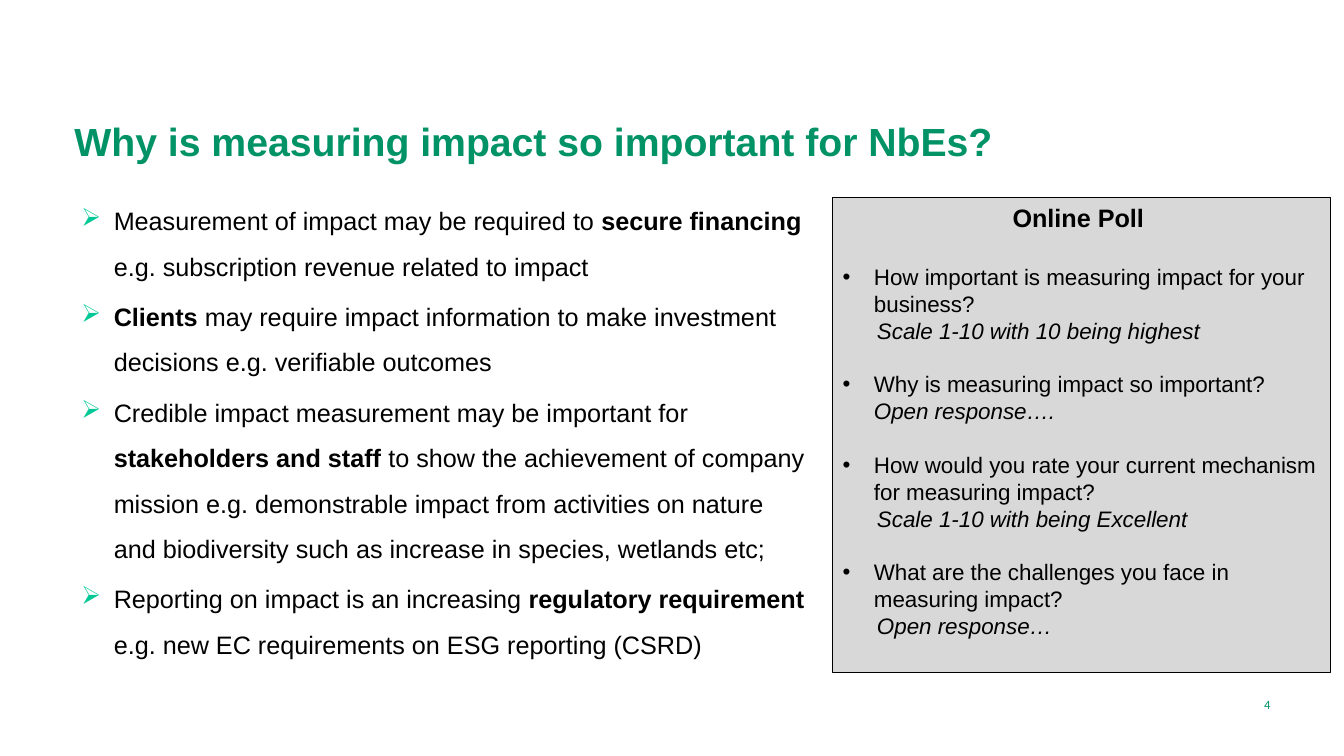
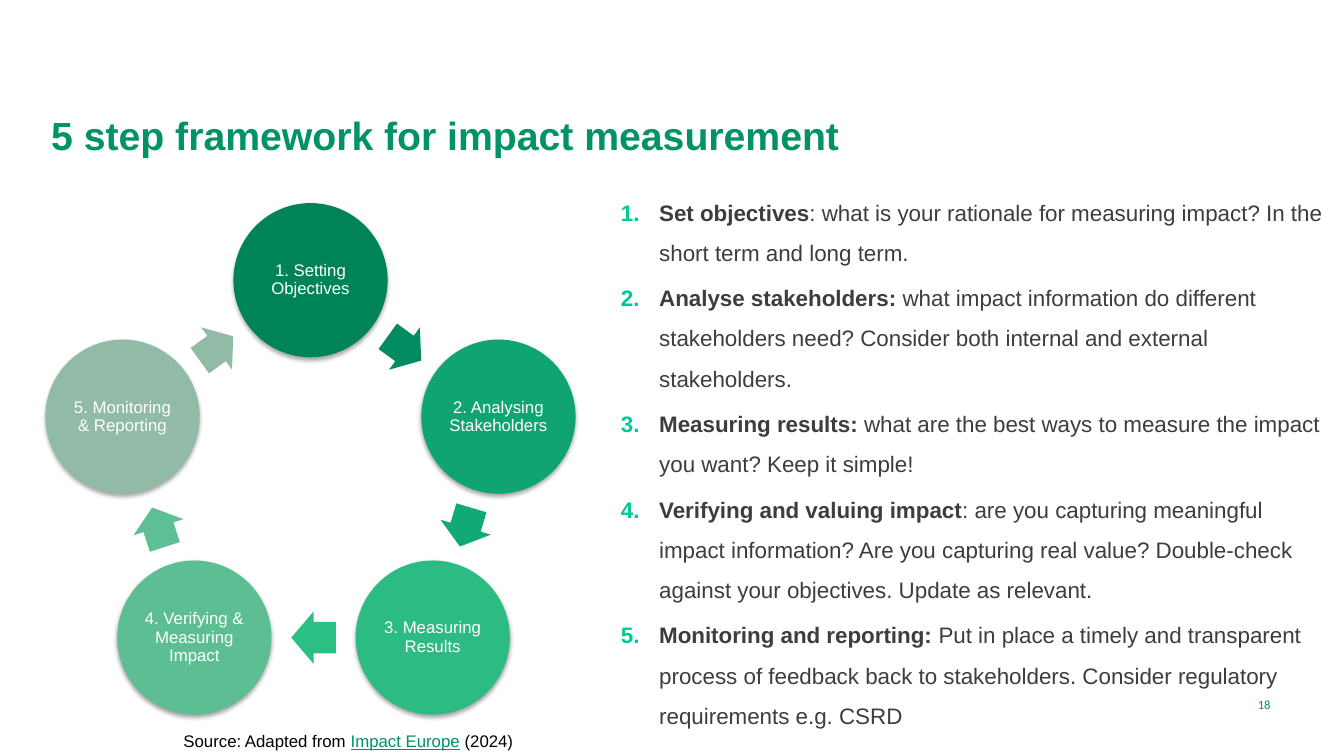
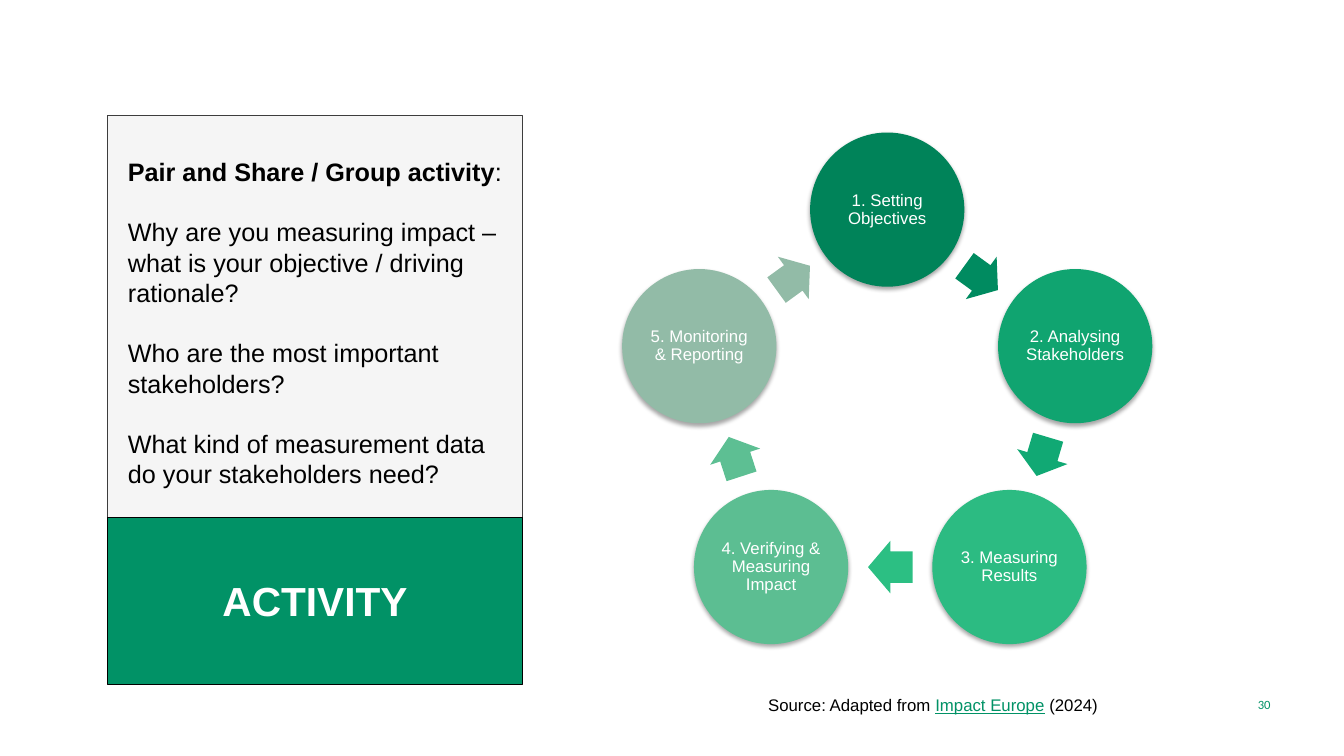
import dataclasses
import math

import lxml.etree
import pptx
import pptx.dml.color
import pptx.enum.shapes
import pptx.enum.text
import pptx.oxml.ns
import pptx.util

ALIGN = pptx.enum.text.PP_ALIGN
ANCHOR = pptx.enum.text.MSO_ANCHOR
SHAPE = pptx.enum.shapes.MSO_SHAPE
inches = pptx.util.Inches
qn = pptx.oxml.ns.qn


@dataclasses.dataclass(frozen=True)
class Theme:
    width: float = 13.33
    height: float = 7.5
    font: str = "Arial"
    number_font: str = "Calibri"
    green: str = "019266"
    bullet: str = "00C897"
    black: str = "000000"
    white: str = "FFFFFF"
    gray: str = "3D3D3D"
    poll_fill: str = "D8D8D8"
    panel_fill: str = "F5F5F5"
    title: float = 28
    banner: float = 29
    body: float = 18
    steps: float = 16
    small: float = 12
    number: float = 9
    line: float = 0.75


THEME = Theme()
LINE_HEIGHT = 1.2
ARROW_BULLET = ("Wingdings", "Ø")
DOT_BULLET = ("Arial", "•")
NUMBER_BULLET = ("Arial", None)

REASONS = [
    [("Measurement of impact may be required to ", ""), ("secure financing ", "b"),
     ("e.g. subscription revenue related to impact", "")],
    [("Clients", "b"),
     (" may require impact information to make investment decisions e.g. verifiable outcomes", "")],
    [("Credible impact measurement may be important for ", ""), ("stakeholders and staff ", "b"),
     ("to show the achievement of company mission e.g. demonstrable impact from activities on nature "
      "and biodiversity such as increase in species, wetlands etc;", "")],
    [("Reporting on impact is an increasing ", ""), ("regulatory requirement ", "b"),
     ("e.g. new EC requirements on ESG reporting (CSRD)", "")],
]

POLL_TITLE = "Online Poll "
POLL = [
    ("How important is measuring impact for your business?", "Scale 1-10 with 10 being highest", 0.34),
    ("Why is measuring impact so important?", "Open response….", 0.31),
    ("How would you rate your current mechanism for measuring impact?",
     "Scale 1-10 with being Excellent", 0.34),
    ("What are the challenges you face in measuring impact?", "Open response…", 0.34),
]

STEPS = [
    ("Set objectives", ": what is your rationale for measuring impact? In the short term and long term."),
    ("Analyse stakeholders: ", "what impact information do different stakeholders need? "
     "Consider both internal and external stakeholders."),
    ("Measuring results: ", "what are the best ways to measure the impact you want? Keep it simple!"),
    ("Verifying and valuing impact", ": are you capturing meaningful impact information? "
     "Are you capturing real value? Double-check against your objectives. Update as relevant."),
    ("Monitoring and reporting: ", "Put in place a timely and transparent process of feedback back "
     "to stakeholders. Consider regulatory requirements e.g. CSRD"),
]

CYCLE = [
    ("1. Setting Objectives", "008359", "008B60", 0),
    ("2. Analysing Stakeholders", "10A470", "11A974", 0),
    ("3. Measuring Results", "2CBB82", "2CBF83", 0.06),
    ("4. Verifying & Measuring Impact", "5CBE92", "5DBF93", 0),
    ("5. Monitoring & Reporting", "92BBA7", "92BBA7", 0),
]
CYCLE_RADIUS = 1.96
CIRCLE = 1.53
ARROW_SHARE = 0.53
ARROW_HEIGHT = 0.52

SOURCE = [("Source: Adapted from ", ""), ("Impact Europe", "u"), (" (2024)", "")]

ACTIVITY = [
    [("Pair and Share / Group activity", "b"), (":", "")],
    [("Why are you measuring impact – what is your objective / driving rationale?", "")],
    [("Who are the most important stakeholders?", "")],
    [("What kind of measurement data do your stakeholders need?", "")],
]


def rgb(color):
    return pptx.dml.color.RGBColor.from_string(color)


def set_frame(shape, anchor=ANCHOR.TOP, margins=(0.1, 0.05, 0.1, 0.05)):
    frame = shape.text_frame
    frame.word_wrap = True
    frame.vertical_anchor = anchor
    frame.margin_left, frame.margin_top, frame.margin_right, frame.margin_bottom = map(inches, margins)
    return frame


def add_box(page, at, **frame_options):
    return set_frame(page.shapes.add_textbox(*map(inches, at)), **frame_options)


def add_shape(shapes, kind, at, fill, line=None):
    shape = shapes.add_shape(kind, *map(inches, at))
    shape.shadow.inherit = False
    shape.fill.solid()
    shape.fill.fore_color.rgb = rgb(fill)
    if line:
        shape.line.color.rgb = rgb(line)
        shape.line.width = pptx.util.Pt(THEME.line)
    else:
        shape.line.fill.background()
    return shape


def add_bullet(props, bullet, color):
    face, char = bullet
    fill = lxml.etree.SubElement(props, qn("a:buClr"))
    lxml.etree.SubElement(fill, qn("a:srgbClr"), val=color)
    font = lxml.etree.SubElement(props, qn("a:buFont"), typeface=face)
    if char:
        if face == "Wingdings":
            font.set("charset", "2")
        lxml.etree.SubElement(props, qn("a:buChar"), char=char)
    else:
        lxml.etree.SubElement(props, qn("a:buAutoNum"), type="arabicPeriod")


def write(frame, runs, size, color=THEME.black, style="", align=ALIGN.LEFT, font=THEME.font,
          indent=(0, 0), bullet=None, bullet_color=THEME.bullet, before=0, spacing=None):
    para = frame.paragraphs[0]
    first = not para.runs
    if not first:
        para = frame.add_paragraph()
    props = para._p.get_or_add_pPr()
    if any(indent):
        props.set("marL", str(inches(indent[0])))
        props.set("indent", str(inches(indent[1])))
    if bullet:
        add_bullet(props, bullet, bullet_color)
    para.alignment = align
    if before and not first:
        para.space_before = pptx.util.Pt(before)
    if spacing:
        para.line_spacing = spacing
    para.font.name = font
    para.font.size = pptx.util.Pt(size)
    para.font.color.rgb = rgb(color)
    if "b" in style:
        para.font.bold = True
    if "i" in style:
        para.font.italic = True
    for text, mark in [(runs, "")] if isinstance(runs, str) else runs:
        span = para.add_run()
        span.text = text
        if mark == "b":
            span.font.bold = True
        if mark == "u":
            span.font.underline = True
            span.font.color.rgb = rgb(THEME.green)


def start_page(deck, number, title=None, title_at=(0, 0)):
    page = deck.slides.add_slide(deck.slide_layouts[6])
    if title:
        frame = add_box(page, (*title_at, 12.06, 0.78), anchor=ANCHOR.BOTTOM)
        write(frame, title, THEME.title, THEME.green, "b")
    frame = add_box(page, (11.55, 6.79, 1.15, 0.4), anchor=ANCHOR.MIDDLE)
    write(frame, number, THEME.number, THEME.green, align=ALIGN.RIGHT, font=THEME.number_font)
    return page


def add_source(page, at, left=0.1, top=0.05):
    panel = add_shape(page.shapes, SHAPE.RECTANGLE, at, THEME.white)
    write(set_frame(panel, margins=(left, top, 0.1, 0.05)), SOURCE, THEME.small)


def add_soft_shadow(shape):
    effects = shape._element.spPr.find(qn("a:effectLst"))
    shadow = lxml.etree.SubElement(
        effects, qn("a:outerShdw"), blurRad=str(pptx.util.Pt(3.1)), dist=str(pptx.util.Pt(1.8)),
        dir="5400000", rotWithShape="0")
    color = lxml.etree.SubElement(shadow, qn("a:srgbClr"), val=THEME.black)
    lxml.etree.SubElement(color, qn("a:alpha"), val="35000")


def add_cycle(page, center_x, center_y):
    shapes = page.shapes.add_group_shape().shapes
    centers = []
    for index, (_, _, _, shift) in enumerate(CYCLE):
        angle = math.tau * index / len(CYCLE)
        centers.append((center_x + CYCLE_RADIUS * math.sin(angle) + shift,
                        center_y - CYCLE_RADIUS * math.cos(angle)))
    for index, (label, fill, arrow_fill, _) in enumerate(CYCLE):
        x, y = centers[index]
        next_x, next_y = centers[(index + 1) % len(centers)]
        circle = add_shape(shapes, SHAPE.OVAL, (x - CIRCLE / 2, y - CIRCLE / 2, CIRCLE, CIRCLE), fill)
        add_soft_shadow(circle)
        frame = set_frame(circle, ANCHOR.MIDDLE, (0.02,) * 4)
        write(frame, label, THEME.small, THEME.white, align=ALIGN.CENTER, spacing=0.9)
        length = ARROW_SHARE * (math.dist((x, y), (next_x, next_y)) - CIRCLE)
        arrow = add_shape(shapes, SHAPE.RIGHT_ARROW,
                          ((x + next_x - length) / 2, (y + next_y - ARROW_HEIGHT) / 2,
                           length, ARROW_HEIGHT), arrow_fill)
        arrow.adjustments[0] = 0.6
        arrow.adjustments[1] = 0.5
        arrow.rotation = math.degrees(math.atan2(next_y - y, next_x - x)) % 360


def build_reasons(deck):
    page = start_page(deck, "4", "Why is measuring impact so important for NbEs?", (0.64, 0.9))
    panel = add_shape(page.shapes, SHAPE.RECTANGLE, (0.42, 1.84, 7.68, 4.95), THEME.white)
    frame = set_frame(panel)
    for runs in REASONS:
        write(frame, runs, THEME.body, indent=(0.61, -0.32), bullet=ARROW_BULLET,
              before=3.6, spacing=1.5)
    poll = add_shape(page.shapes, SHAPE.RECTANGLE, (8.26, 1.96, 4.94, 4.71),
                     THEME.poll_fill, THEME.black)
    frame = set_frame(poll)
    write(frame, POLL_TITLE, THEME.body, style="b", align=ALIGN.CENTER)
    gap = THEME.body * LINE_HEIGHT
    for question, answer, left in POLL:
        write(frame, question, THEME.steps, indent=(0.31, -0.31), bullet=DOT_BULLET,
              bullet_color=THEME.black, before=gap)
        write(frame, answer, THEME.steps, style="i", indent=(left, 0))
        gap = THEME.steps * LINE_HEIGHT


def build_framework(deck):
    page = start_page(deck, "18", "5 step framework for impact measurement", (0.41, 0.84))
    frame = add_box(page, (5.93, 1.73, 7.4, 5.61), anchor=ANCHOR.MIDDLE)
    for name, detail in STEPS:
        write(frame, [(name, "b"), (detail, "")], THEME.steps, THEME.gray,
              indent=(0.51, -0.38), bullet=NUMBER_BULLET, before=3.6, spacing=1.5)
    add_source(page, (0.38, 7, 5.66, 0.5), left=1.44, top=0.25)
    add_cycle(page, 3.08, 4.74)


def build_activity(deck):
    page = start_page(deck, "30")
    panel = add_shape(page.shapes, SHAPE.RECTANGLE, (1.07, 1.15, 4.11, 4.14),
                      THEME.panel_fill, THEME.gray)
    frame = set_frame(panel, margins=(0.1, 0.4, 0.1, 0.1))
    for runs in ACTIVITY:
        write(frame, runs, THEME.body, indent=(0.1, 0), before=THEME.body * LINE_HEIGHT)
    banner = add_shape(page.shapes, SHAPE.RECTANGLE, (1.07, 5.13, 4.11, 1.66),
                       THEME.green, THEME.black)
    write(set_frame(banner, ANCHOR.MIDDLE), "ACTIVITY", THEME.banner, THEME.white, "b", ALIGN.CENTER)
    add_cycle(page, 8.8, 4.04)
    add_source(page, (7.52, 6.84, 4.25, 0.3))


def main():
    deck = pptx.Presentation()
    deck.slide_width = inches(THEME.width)
    deck.slide_height = inches(THEME.height)
    for build in (build_reasons, build_framework, build_activity):
        build(deck)
    deck.save("out.pptx")


if __name__ == "__main__":
    main()
